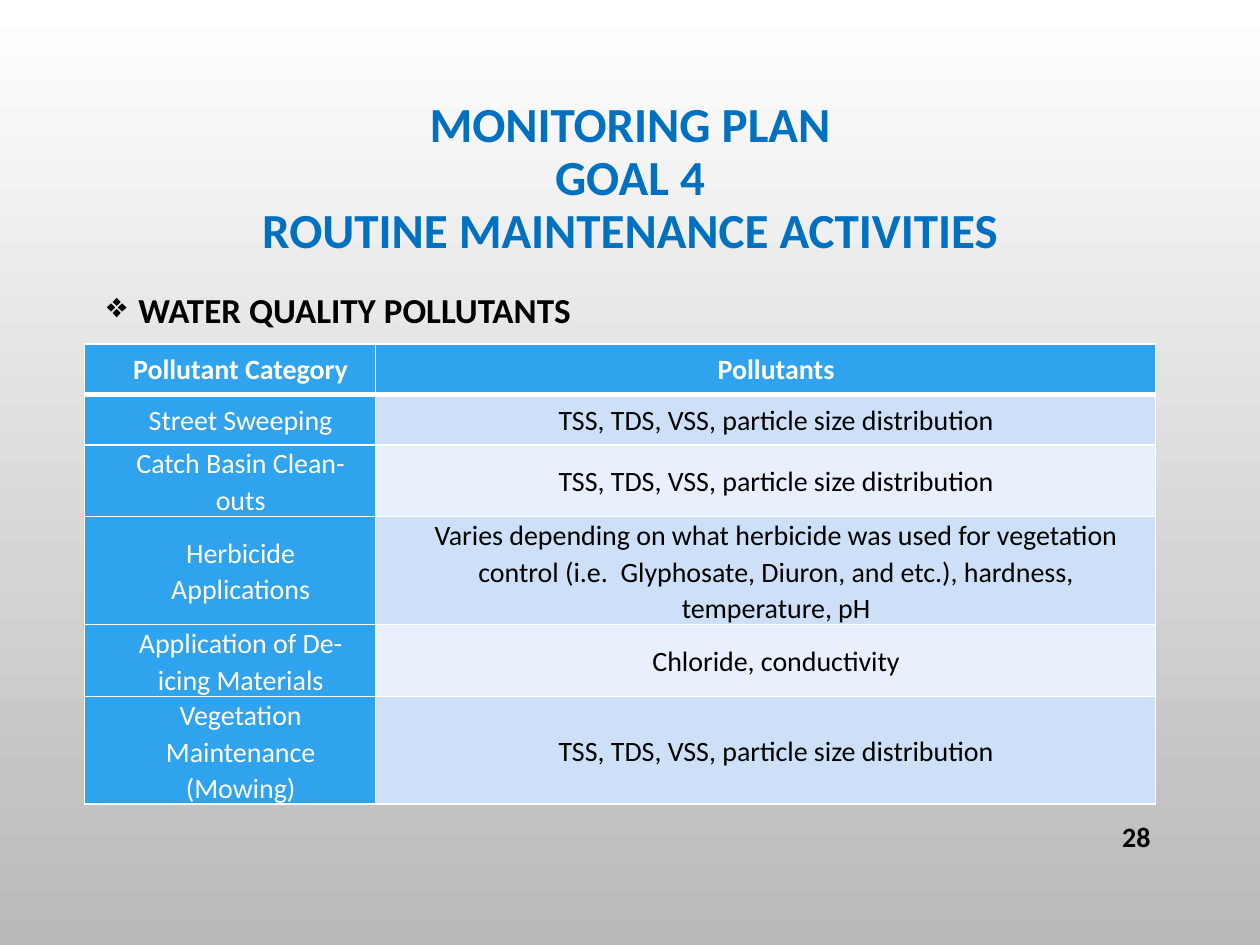
from typing import NamedTuple

from lxml import etree
from pptx import Presentation
from pptx import util as u
from pptx.dml.color import RGBColor
from pptx.enum import text
from pptx.oxml import ns

WIDTH, HEIGHT = 10, 7.5
FONT = "Calibri"
COLORS = {
    "white": "FFFFFF",
    "black": "000000",
    "page_end": "B9B9B9",
    "title": "0070C0",
    "header": "2FA3EE",
    "band_dark": "CDE0F8",
    "band_light": "E8F0FC",
}


class Label(NamedTuple):
    """A text box placed by shares of the slide's size."""
    words: str
    left: float
    top: float
    width: float
    height: float
    size: int
    color: str
    align: text.PP_ALIGN
    anchor: text.MSO_ANCHOR
    spacing: float = 1.0
    bullet: str = ""


class Activity(NamedTuple):
    category: str
    pollutants: str


SOLIDS = "TSS, TDS, VSS, particle size distribution"
HEADER = Activity("Pollutant Category", "Pollutants")
ACTIVITIES = [
    Activity("Street Sweeping", SOLIDS),
    Activity("Catch Basin Clean-outs", SOLIDS),
    Activity("Herbicide Applications",
             "Varies depending on what herbicide was used for vegetation control "
             "(i.e.  Glyphosate, Diuron, and etc.), hardness, temperature, pH"),
    Activity("Application of De-icing Materials", "Chloride, conductivity"),
    Activity("Vegetation Maintenance (Mowing)", SOLIDS),
]
LABELS = [
    Label("MONITORING PLAN\vGOAL 4\vROUTINE MAINTENANCE ACTIVITIES",
          0.075, 0.09, 0.85, 0.2, 28, "title",
          text.PP_ALIGN.CENTER, text.MSO_ANCHOR.MIDDLE, 0.9),
    Label("WATER QUALITY POLLUTANTS", 0.075, 0.29, 0.54, 0.09, 20, "black",
          text.PP_ALIGN.LEFT, text.MSO_ANCHOR.TOP, 1.2, "❖"),
    Label("28", 0.86, 0.86, 0.063, 0.05, 16, "black",
          text.PP_ALIGN.RIGHT, text.MSO_ANCHOR.MIDDLE),
]


def rgb(name: str) -> RGBColor:
    return RGBColor.from_string(COLORS[name])


def style_runs(paragraph, size: int, color: str, bold: bool) -> None:
    for run in paragraph.runs:
        run.font.name = FONT
        run.font.size = u.Pt(size)
        run.font.bold = bold
        run.font.color.rgb = rgb(color)


def add_bullet(paragraph, mark: str) -> None:
    props = paragraph._p.get_or_add_pPr()
    props.set("marL", str(u.Inches(0.25)))
    props.set("indent", str(-u.Inches(0.25)))
    etree.SubElement(props, ns.qn("a:buChar")).set("char", mark)


def add_label(slide, label: Label) -> None:
    box = slide.shapes.add_textbox(
        u.Inches(label.left * WIDTH), u.Inches(label.top * HEIGHT),
        u.Inches(label.width * WIDTH), u.Inches(label.height * HEIGHT))
    frame = box.text_frame
    frame.word_wrap = True
    frame.vertical_anchor = label.anchor
    paragraph = frame.paragraphs[0]
    paragraph.text = label.words
    if label.bullet:
        add_bullet(paragraph, label.bullet)
    paragraph.alignment = label.align
    paragraph.line_spacing = label.spacing
    style_runs(paragraph, label.size, label.color, True)


def set_borders(cell, top: float, bottom: float) -> None:
    props = cell._tc.get_or_add_tcPr()
    widths = {"lnL": 1, "lnR": 1, "lnT": top, "lnB": bottom}
    for position, (side, width) in enumerate(widths.items()):
        line = etree.Element(ns.qn(f"a:{side}"), w=str(u.Pt(width)))
        fill = etree.SubElement(line, ns.qn("a:solidFill"))
        etree.SubElement(fill, ns.qn("a:srgbClr")).set("val", COLORS["white"])
        props.insert(position, line)


def fill_cell(cell, words: str, fill: str, color: str, bold: bool) -> None:
    cell.fill.solid()
    cell.fill.fore_color.rgb = rgb(fill)
    cell.vertical_anchor = text.MSO_ANCHOR.MIDDLE
    cell.margin_left = cell.margin_right = u.Inches(0.07)
    cell.margin_top = cell.margin_bottom = 0
    paragraph = cell.text_frame.paragraphs[0]
    paragraph.text = words
    paragraph.alignment = text.PP_ALIGN.CENTER
    paragraph.line_spacing = 1.07
    paragraph._p.get_or_add_pPr().set("marL", str(u.Inches(0.17)))
    style_runs(paragraph, 16, color, bold)


def add_pollutant_table(slide) -> None:
    rows = [HEADER, *ACTIVITIES]
    row_height, column_widths = 0.4, (2.31, 6.19)
    table = slide.shapes.add_table(
        len(rows), len(column_widths), u.Inches(0.67), u.Inches(2.73),
        u.Inches(sum(column_widths)), u.Inches(row_height * len(rows))).table
    for column, width in zip(table.columns, column_widths):
        column.width = u.Inches(width)
    for r, activity in enumerate(rows):
        table.rows[r].height = u.Inches(row_height)
        for c, words in enumerate(activity):
            heading = r == 0 or c == 0
            band = "band_dark" if r % 2 else "band_light"
            cell = table.cell(r, c)
            fill_cell(cell, words, "header" if heading else band,
                      "white" if heading else "black", r == 0)
            set_borders(cell, top=3 if r == 1 else 1, bottom=3 if r == 0 else 1)


def paint_background(slide) -> None:
    fill = slide.background.fill
    fill.gradient()
    fill.gradient_angle = 270
    for stop, position, color in zip(fill.gradient_stops, (0, 1), ("white", "page_end")):
        stop.position = position
        stop.color.rgb = rgb(color)


def main() -> None:
    deck = Presentation()
    deck.slide_width, deck.slide_height = u.Inches(WIDTH), u.Inches(HEIGHT)
    slide = deck.slides.add_slide(deck.slide_layouts[6])
    paint_background(slide)
    # Title, section heading and page number
    for label in LABELS:
        add_label(slide, label)
    # Pollutants by maintenance activity
    add_pollutant_table(slide)
    deck.save("out.pptx")


if __name__ == "__main__":
    main()
